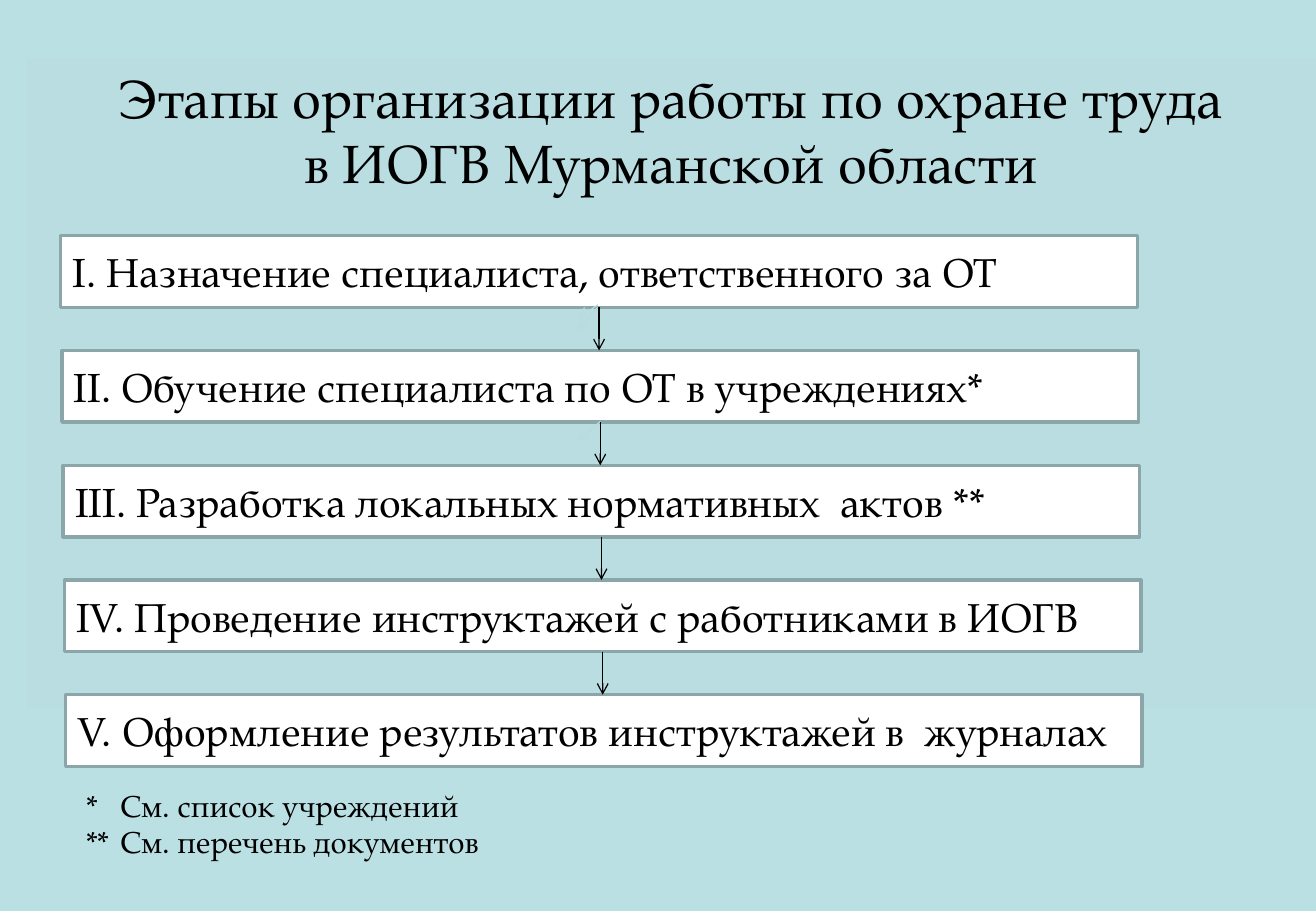
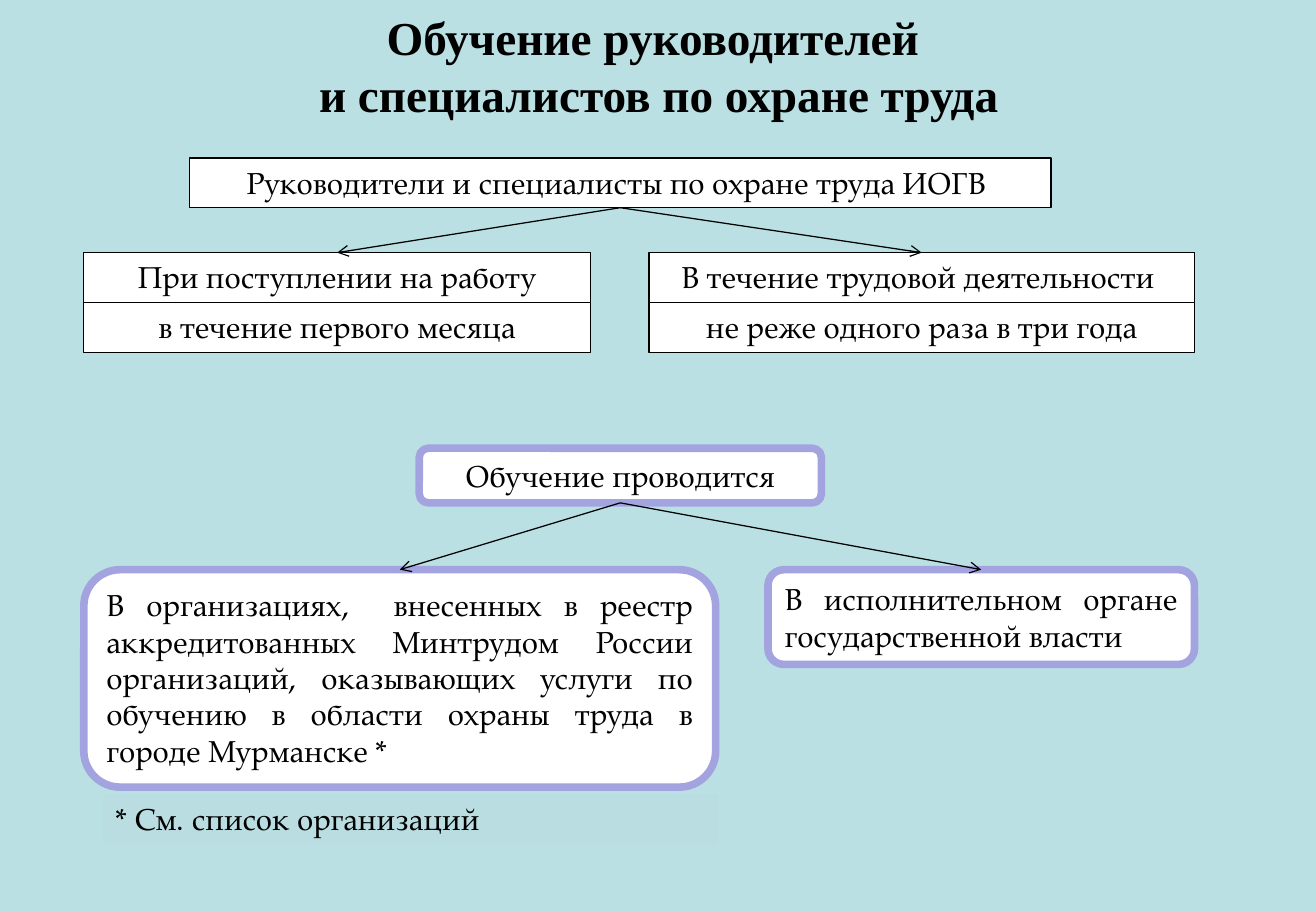
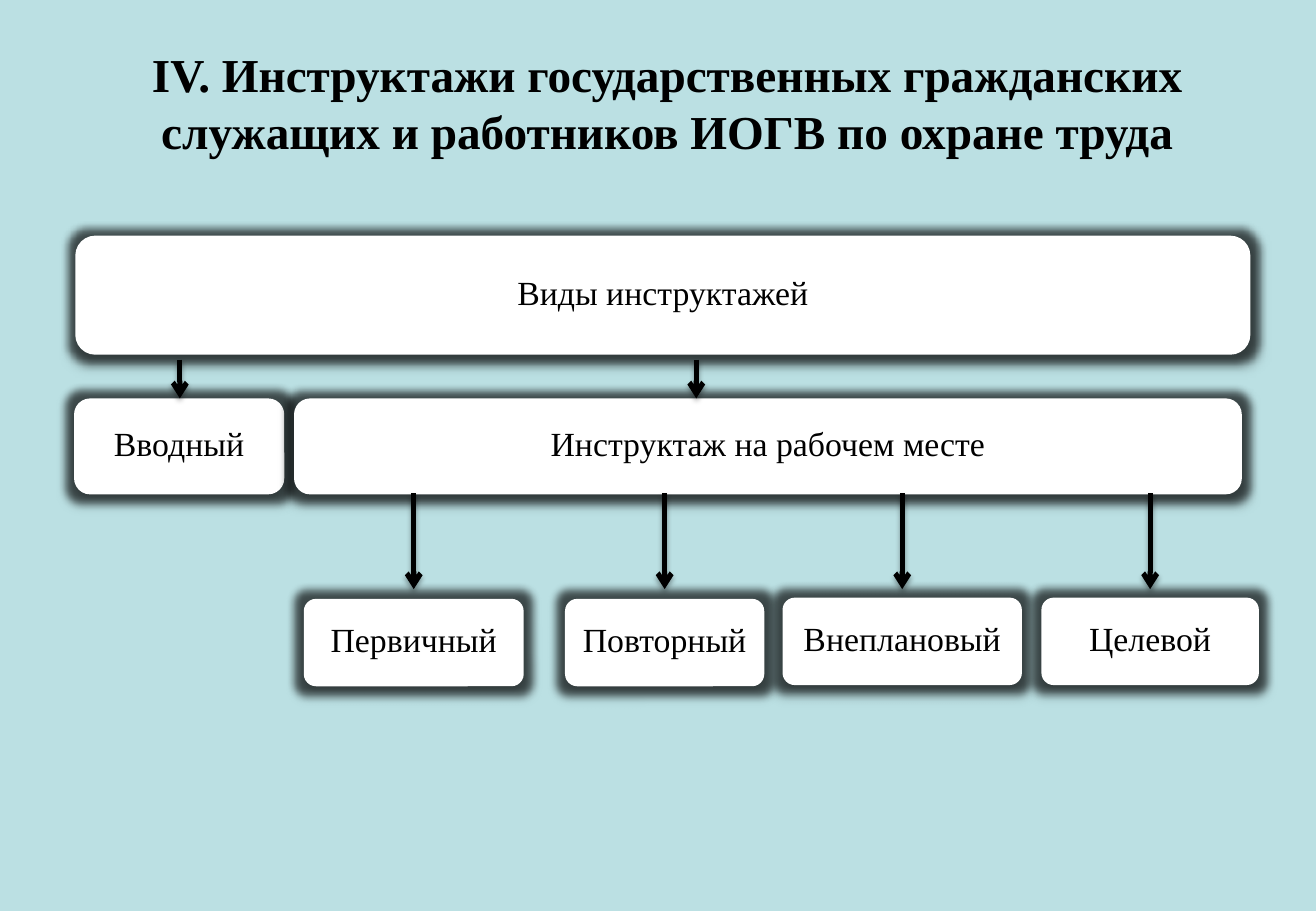
from lxml.etree import SubElement as sub
from pptx import Presentation
from pptx.dml.color import RGBColor
from pptx.enum.shapes import MSO_CONNECTOR as Conn, MSO_SHAPE as Shape
from pptx.enum.text import MSO_ANCHOR as Anchor, PP_ALIGN as Align
from pptx.oxml.ns import qn
from pptx.util import Inches, Pt

# Shared look
SERIF, ROMAN = "TeX Gyre Pagella", "Times New Roman"
BACK, PANEL, WHITE, BLACK = "BBE0E3", "BADDE1", "FFFFFF", "000000"
STEEL, LILAC, PALE = "8AA6A8", "A3A3E0", "B6DCDF"


def paint(color, code):
    """Set a fill or a colour from a hex string."""
    if hasattr(color, "solid"):
        color.solid()
        color = color.fore_color
    color.rgb = RGBColor.from_string(code)


def write(shape, lines, size, font=SERIF, bold=False, align=Align.LEFT,
          anchor=Anchor.TOP, pad=0.1, pitch=None, hang=None):
    """Fill a shape with paragraphs; a line feed breaks a line."""
    frame = shape.text_frame
    frame.word_wrap = True
    frame.vertical_anchor = anchor
    frame.margin_left = frame.margin_right = Inches(pad)
    frame.margin_top = frame.margin_bottom = Inches(0.05)
    for i, line in enumerate(lines):
        para = frame.add_paragraph() if i else frame.paragraphs[0]
        para.alignment = align
        if pitch:
            para.line_spacing = pitch
        if hang:
            props = para._p.get_or_add_pPr()
            props.set("marL", str(Inches(hang)))
            props.set("indent", str(-Inches(hang)))
        for j, part in enumerate(line.split("\n")):
            if j:
                para.add_line_break()
            run = para.add_run()
            run.text = part
            run.font.name, run.font.size, run.font.bold = font, Pt(size), bold
            paint(run.font.color, BLACK)


def shade(effects, kind, alpha, **sizes):
    """Add a black glow or shadow; sizes are in points."""
    node = sub(effects, qn("a:" + kind))
    for name, value in sizes.items():
        node.set(name, str(Pt(value)))
    if kind == "outerShdw":
        node.set("dir", "5400000")
        node.set("rotWithShape", "0")
    black = sub(node, qn("a:srgbClr"), val=BLACK)
    sub(black, qn("a:alpha"), val=str(alpha * 1000))


def box(slide, place, fill=WHITE, line=None, width=0.75, kind=Shape.RECTANGLE):
    shape = slide.shapes.add_shape(kind, *map(Inches, place))
    shape.shadow.inherit = False
    paint(shape.fill, fill)
    if line:
        paint(shape.line.color, line)
        shape.line.width = Pt(width)
    else:
        shape.line.fill.background()
    return shape


def label(slide, place, text, **look):
    """Outlined box with 18 pt centred text."""
    align = look.pop("align", Align.CENTER)
    write(box(slide, place, **look), [text], 18, align=align)


def card(slide, place, text, bend=0.167):
    """White rounded box with a dark halo."""
    shape = box(slide, place, kind=Shape.ROUNDED_RECTANGLE)
    shape.adjustments[0] = bend
    halo = shape.element.spPr.find(qn("a:effectLst"))
    shade(halo, "glow", 60, rad=10)
    shade(halo, "outerShdw", 32, blurRad=3.5, dist=2.2)
    write(shape, [text], 20, ROMAN, align=Align.CENTER,
          anchor=Anchor.MIDDLE, pad=0.05, pitch=0.85)


def arrow(slide, start, end, color=BLACK, width=0.75, soft=False):
    line = slide.shapes.add_connector(
        Conn.STRAIGHT, *map(Inches, (*start, *end)))
    paint(line.line.color, color)
    line.line.width = Pt(width)
    props = line.element.spPr
    sub(props.find(qn("a:ln")), qn("a:tailEnd"), type="arrow")
    effects = sub(props, qn("a:effectLst"))
    if soft:
        shade(effects, "outerShdw", 35, blurRad=3.1, dist=1.8)


def top(place):
    x, y, w, _ = place
    return x + w / 2, y


def foot(place):
    x, y, w, h = place
    return x + w / 2, y + h


def title(slide, place, text):
    """Bold centred heading."""
    write(slide.shapes.add_textbox(*map(Inches, place)), [text], 28, ROMAN,
          bold=True, align=Align.CENTER, anchor=Anchor.MIDDLE)


def stages(slide):
    panel = box(slide, (0.22, 0.48, 10.61, 5.35), PANEL)
    write(panel, ["Этапы организации работы по охране труда\n"
                  "в ИОГВ Мурманской области"], 32, align=Align.CENTER)
    # Chain of steps, each a little further right
    steps = ["I. Назначение специалиста, ответственного за ОТ",
             "II. Обучение специалиста по ОТ в учреждениях*",
             "III. Разработка локальных нормативных  актов **",
             "IV. Проведение инструктажей с работниками в ИОГВ",
             "V. Оформление результатов инструктажей в  журналах"]
    spots = [(0.5 + 0.01 * i, 1.94 + 3.78 / 4 * i, 8.86, 0.59)
             for i in range(len(steps))]
    for spot, text in zip(spots, steps):
        write(box(slide, spot, line=STEEL, width=2), [text], 24,
              anchor=Anchor.MIDDLE)
    # Faint arrows, then the main ones
    for start, end in (((4.92, 2.51), (4.76, 2.62)),
                       ((4.92, 2.53), (4.75, 2.72)),
                       ((4.94, 3.47), (4.76, 3.63))):
        arrow(slide, start, end, PALE)
    for here, after in zip(spots, spots[1:]):
        x, y = foot(here)
        arrow(slide, (x, y), (x, after[1]))
    # Footnotes
    write(box(slide, (0.61, 6.43, 4.25, 0.71), BACK),
          ["*\tСм. список учреждений", "**\tСм. перечень документов"],
          18, hang=0.28)


def training(slide):
    title(slide, (0.46, 0, 9.92, 1.07),
          "Обучение руководителей \nи специалистов по охране труда")
    # Who is trained and when
    staff = (1.56, 1.3, 7.09, 0.41)
    label(slide, staff, "Руководители и специалисты по охране труда ИОГВ ",
          line=BLACK)
    for x, w, event, term in (
            (0.69, 4.17, "При поступлении на работу",
             "в течение первого месяца"),
            (5.34, 4.49, "В течение трудовой деятельности ",
             "не реже одного раза в три года")):
        spot = (x, 2.08, w, 0.41)
        label(slide, spot, event, line=BLACK)
        label(slide, (x, 2.49, w, 0.41), term, line=BLACK)
        arrow(slide, foot(staff), top(spot))
    # Where training takes place
    frame = dict(line=LILAC, width=4.5, kind=Shape.ROUNDED_RECTANGLE)
    root = (3.45, 3.69, 3.31, 0.45)
    label(slide, root, "Обучение проводится", **frame)
    for spot, text in (
            ((0.69, 4.69, 5.2, 1.79),
             "В организациях,  внесенных в реестр аккредитованных Минтрудом "
             "России организаций, оказывающих услуги по обучению в области "
             "охраны труда в городе Мурманске *"),
            ((6.32, 4.69, 3.51, 0.78),
             "В исполнительном органе государственной власти")):
        label(slide, spot, text, align=Align.JUSTIFY, **frame)
        arrow(slide, foot(root), top(spot))
    label(slide, (0.85, 6.54, 5.06, 0.41), "* См. список организаций",
          fill=PANEL, align=Align.LEFT)


def briefings(slide):
    title(slide, (0.61, 0.21, 9.76, 1.26),
          "IV. Инструктажи государственных гражданских служащих "
          "и работников ИОГВ по охране труда")
    bold = dict(width=3, soft=True)
    # Kinds of briefing
    card(slide, (0.62, 1.94, 9.67, 0.98), "Виды инструктажей")
    card(slide, (0.61, 3.28, 1.73, 0.79), "Вводный")
    # Kinds held at the workplace
    kinds = [(2.5, 4.93, 1.81, "Первичный"), (4.65, 4.93, 1.64, "Повторный"),
             (6.44, 4.92, 1.97, "Внеплановый"), (8.57, 4.92, 1.79, "Целевой")]
    for x, y, w, text in kinds:
        card(slide, (x, y, w, 0.72), text, 0.14)
    card(slide, (2.42, 3.28, 7.8, 0.79), "Инструктаж на рабочем месте")
    # Arrows
    for x in (1.48, 5.73):
        arrow(slide, (x, 2.96), (x, 3.28), **bold)
    for x, _, w, _ in kinds:
        arrow(slide, (x + w / 2, 4.06), (x + w / 2, 4.85), **bold)


def main():
    deck = Presentation()
    deck.slide_width, deck.slide_height = Inches(10.83), Inches(7.5)
    paint(deck.slide_master.background.fill, BACK)
    for build in (stages, training, briefings):
        build(deck.slides.add_slide(deck.slide_layouts[6]))
    deck.save("out.pptx")


if __name__ == "__main__":
    main()
